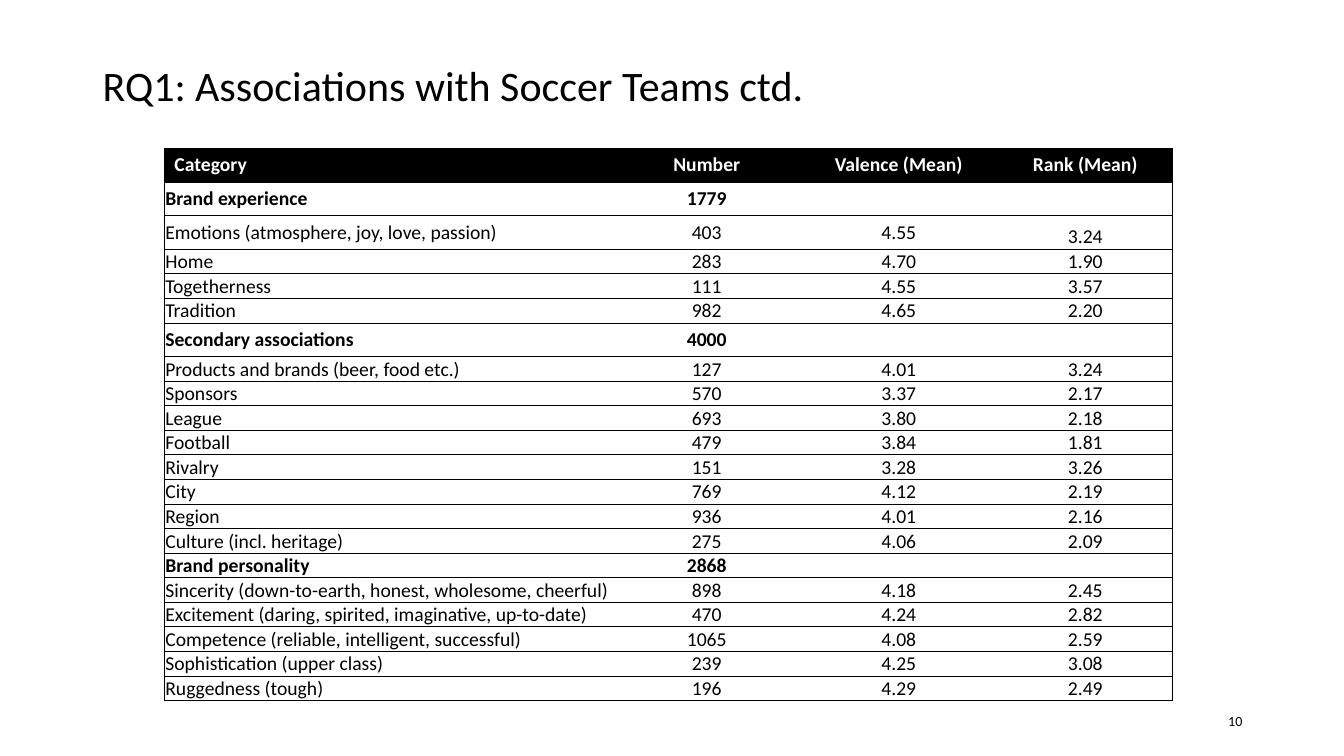
from lxml import etree
from pptx import Presentation
from pptx import util as u
from pptx.dml.color import RGBColor
from pptx.enum import text
from pptx.oxml import ns

BLACK = RGBColor(0, 0, 0)
WHITE = RGBColor(255, 255, 255)
FONT = "Calibri"

# Lengths in inches
SLIDE_W, SLIDE_H = 13.33, 7.5
TABLE_LEFT, TABLE_TOP = 1.63, 1.47
COLUMNS = [4.46, 1.84, 1.97, 1.73]
TALL, SHORT = 0.33, 0.24
TALL_ROWS = {"Category", "Brand experience",
             "Emotions (atmosphere, joy, love, passion)", "Secondary associations"}

HEADINGS = ("Category", "Number", "Valence (Mean)", "Rank (Mean)")
GROUPS = [
    (("Brand experience", "1779"), [
        ("Emotions (atmosphere, joy, love, passion)", "403", "4.55", "3.24"),
        ("Home", "283", "4.70", "1.90"),
        ("Togetherness", "111", "4.55", "3.57"),
        ("Tradition", "982", "4.65", "2.20"),
    ]),
    (("Secondary associations", "4000"), [
        ("Products and brands (beer, food etc.)", "127", "4.01", "3.24"),
        ("Sponsors", "570", "3.37", "2.17"),
        ("League", "693", "3.80", "2.18"),
        ("Football", "479", "3.84", "1.81"),
        ("Rivalry", "151", "3.28", "3.26"),
        ("City", "769", "4.12", "2.19"),
        ("Region", "936", "4.01", "2.16"),
        ("Culture (incl. heritage)", "275", "4.06", "2.09"),
    ]),
    (("Brand personality", "2868"), [
        ("Sincerity (down-to-earth, honest, wholesome, cheerful)", "898", "4.18", "2.45"),
        ("Excitement (daring, spirited, imaginative, up-to-date)", "470", "4.24", "2.82"),
        ("Competence (reliable, intelligent, successful)", "1065", "4.08", "2.59"),
        ("Sophistication (upper class)", "239", "4.25", "3.08"),
        ("Ruggedness (tough)", "196", "4.29", "2.49"),
    ]),
]


def write(paragraph, words, size, align, color=BLACK, bold=False):
    paragraph.text = words
    paragraph.alignment = align
    font = paragraph.font
    font.name, font.size, font.bold = FONT, u.Pt(size), bold
    font.color.rgb = color


def add_label(slide, box, words, size, align, anchor):
    frame = slide.shapes.add_textbox(*map(u.Inches, box)).text_frame
    frame.word_wrap = True
    frame.vertical_anchor = anchor
    write(frame.paragraphs[0], words, size, align)
    return frame


def set_borders(cell, column):
    """Rule every row; rule only the outer sides of the table."""
    properties = cell._tc.get_or_add_tcPr()
    shown = {"lnL": column == 0, "lnR": column == len(COLUMNS) - 1,
             "lnT": True, "lnB": True}
    for side, visible in shown.items():
        line = etree.SubElement(properties, ns.qn("a:" + side), w=str(u.Pt(0.5)))
        if visible:
            fill = etree.SubElement(line, ns.qn("a:solidFill"))
            etree.SubElement(fill, ns.qn("a:srgbClr"), val=str(BLACK))
        else:
            etree.SubElement(line, ns.qn("a:noFill"))


def fill_cell(cell, column, words, heading, bold, tall):
    set_borders(cell, column)
    cell.fill.solid()
    cell.fill.fore_color.rgb = BLACK if heading else WHITE
    if not heading:
        last = column == len(COLUMNS) - 1
        cell.vertical_anchor = text.MSO_ANCHOR.BOTTOM if last else text.MSO_ANCHOR.MIDDLE
        # Centred figures of tall rows keep the default insets
        if not tall or column in (0, len(COLUMNS) - 1):
            cell.margin_left = cell.margin_right = cell.margin_top = u.Inches(0.01)
            cell.margin_bottom = 0
    align = text.PP_ALIGN.CENTER if column else text.PP_ALIGN.LEFT
    write(cell.text_frame.paragraphs[0], words, 14, align,
          WHITE if heading else BLACK, bold)


def add_associations(slide):
    rows = [(HEADINGS, True)]
    for total, members in GROUPS:
        rows.append((total + ("", ""), True))
        rows += [(member, False) for member in members]
    heights = [TALL if values[0] in TALL_ROWS else SHORT for values, _ in rows]

    associations = slide.shapes.add_table(
        len(rows), len(COLUMNS), u.Inches(TABLE_LEFT), u.Inches(TABLE_TOP),
        u.Inches(sum(COLUMNS)), u.Inches(sum(heights))).table
    associations.first_row = associations.horz_banding = False
    for column, width in zip(associations.columns, COLUMNS):
        column.width = u.Inches(width)
    for r, ((values, bold), height) in enumerate(zip(rows, heights)):
        associations.rows[r].height = u.Inches(height)
        for c, words in enumerate(values):
            fill_cell(associations.cell(r, c), c, words, r == 0, bold, height == TALL)


def main():
    deck = Presentation()
    deck.slide_width, deck.slide_height = u.Inches(SLIDE_W), u.Inches(SLIDE_H)
    slide = deck.slides.add_slide(deck.slide_layouts[6])

    # Title
    title = add_label(slide, (0.92, 0.62, 11.5, 0.53),
                      "RQ1: Associations with Soccer Teams ctd.", 30,
                      text.PP_ALIGN.LEFT, text.MSO_ANCHOR.BOTTOM)
    title.paragraphs[0].line_spacing = 0.9

    # Page number
    add_label(slide, (9.42, 6.95, 3, 0.4), "10", 10,
              text.PP_ALIGN.RIGHT, text.MSO_ANCHOR.MIDDLE)

    # Table of associations
    add_associations(slide)
    deck.save("out.pptx")


if __name__ == "__main__":
    main()
